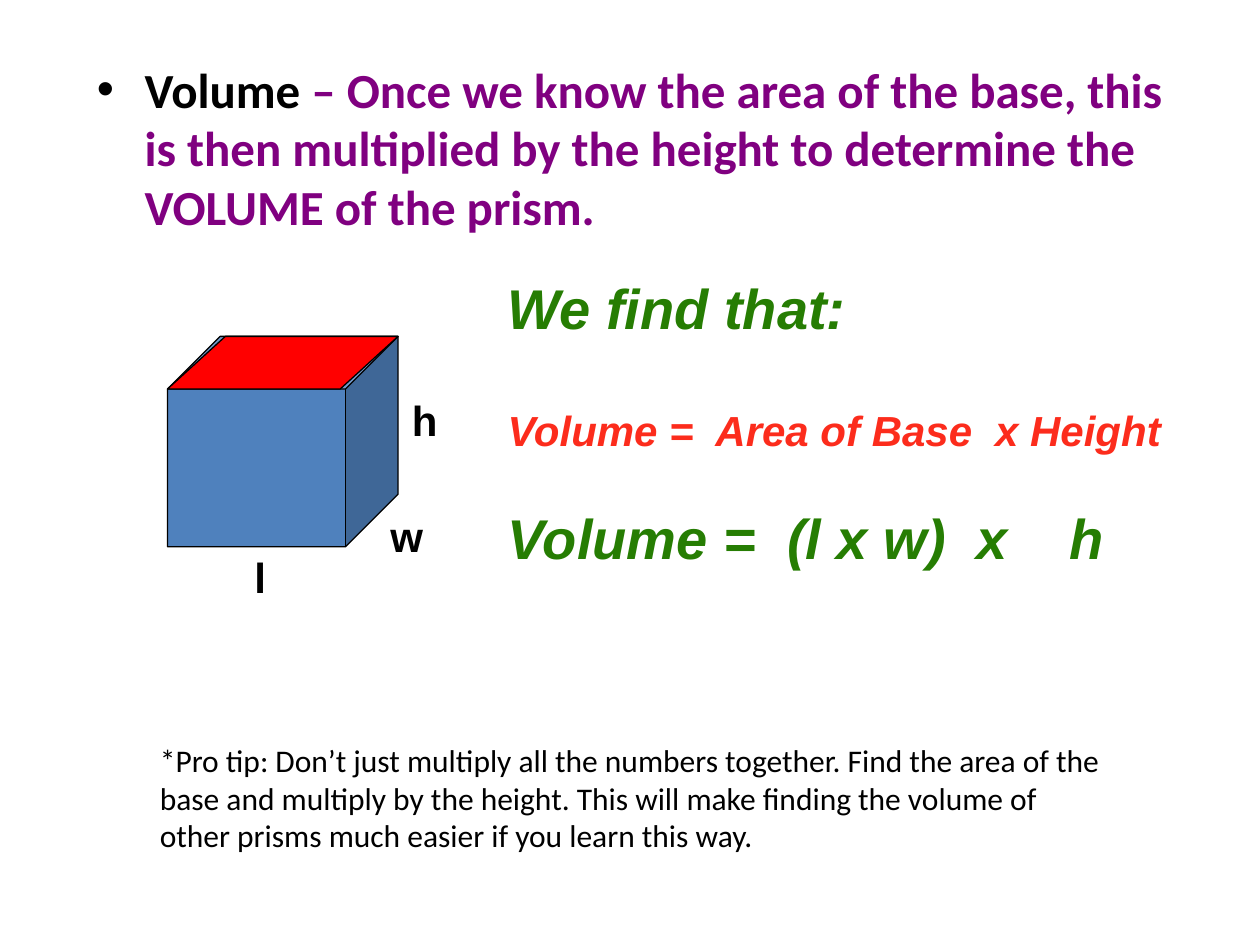
from collections import namedtuple
from dataclasses import dataclass

from lxml.etree import SubElement
from pptx import Presentation
from pptx.dml.color import RGBColor
from pptx.enum.shapes import MSO_SHAPE
from pptx.enum.text import MSO_AUTO_SIZE
from pptx.oxml.ns import qn
from pptx.util import Inches, Pt

Box = namedtuple("Box", "left top width height")


@dataclass(frozen=True)
class Theme:
    black: str = "000000"
    purple: str = "800080"
    green: str = "267D03"
    orange: str = "FC2C1C"
    blue: str = "4F81BD"
    red: str = "FF0000"
    body_font: str = "Calibri"
    label_font: str = "Arial"
    formula_size: int = 32
    body_size: int = 28
    label_size: int = 24
    tip_size: int = 18
    outline: float = 0.75


THEME = Theme()


def style(span, font, size, color, bold=False, italic=False):
    span.font.name = font
    span.font.size = Pt(size)
    span.font.color.rgb = RGBColor.from_string(color)
    span.font.bold = bold
    span.font.italic = italic


def add_text_box(page, box, wrap=True):
    frame = page.shapes.add_textbox(*map(Inches, box)).text_frame
    frame.word_wrap = wrap
    frame.auto_size = MSO_AUTO_SIZE.NONE
    return frame


def add_bullet(para, indent):
    properties = para._p.get_or_add_pPr()
    properties.set("marL", str(Inches(indent)))
    properties.set("indent", str(-Inches(indent)))
    SubElement(properties, qn("a:buFont"), typeface=THEME.label_font)
    SubElement(properties, qn("a:buChar"), char="•")


def add_tab_stops(para, stops):
    tabs = SubElement(para._p.get_or_add_pPr(), qn("a:tabLst"))
    for stop in stops:
        SubElement(tabs, qn("a:tab"), pos=str(Inches(stop)), algn="l")


def add_definition(page, box):
    para = add_text_box(page, box).paragraphs[0]
    add_bullet(para, 0.38)
    parts = [
        ("Volume", THEME.black),
        (" – Once we know the area of the base, this is then multiplied by "
         "the height to determine the VOLUME of the prism.", THEME.purple),
    ]
    for text, color in parts:
        span = para.add_run()
        span.text = text
        style(span, THEME.body_font, THEME.body_size, color, bold=True)


def add_formulas(page, box):
    frame = add_text_box(page, box)
    lines = [
        ("We find that:", THEME.formula_size, THEME.green, 0, []),
        ("Volume =\tArea of Base\tx Height", THEME.label_size, THEME.orange,
         36.8, [1.65, 3.87]),
        ("Volume =\t(l x w)\tx\th", THEME.formula_size, THEME.green,
         27.6, [2.22, 3.72, 4.46]),
    ]
    frame.text = "\n".join(line[0] for line in lines)
    for para, (_, size, color, gap, stops) in zip(frame.paragraphs, lines):
        para.space_before = Pt(gap)
        if stops:
            add_tab_stops(para, stops)
        for span in para.runs:
            style(span, THEME.label_font, size, color, bold=True, italic=True)


def add_solid(page, kind, box, color, adjustment):
    solid = page.shapes.add_shape(kind, *map(Inches, box))
    solid.shadow.inherit = False
    solid.adjustments[0] = adjustment
    solid.fill.solid()
    solid.fill.fore_color.rgb = RGBColor.from_string(color)
    solid.line.color.rgb = RGBColor.from_string(THEME.black)
    solid.line.width = Pt(THEME.outline)


def add_prism(page, box):
    labels = [("l", 0.59, 1.66, 0.29), ("w", 1.67, 1.33, 0.46),
              ("h", 1.84, 0.41, 0.4)]
    for text, across, down, width in labels:
        place = Box(box.left + across, box.top + down, width, 0.5)
        frame = add_text_box(page, place, wrap=False)
        frame.text = text
        style(frame.paragraphs[0].runs[0], THEME.label_font,
              THEME.label_size, THEME.black, bold=True)
    add_solid(page, MSO_SHAPE.CUBE, box, THEME.blue, 0.25)
    lid = box._replace(height=box.height / 4)
    add_solid(page, MSO_SHAPE.PARALLELOGRAM, lid, THEME.red, 1.1)


def add_tip(page, box):
    frame = add_text_box(page, box)
    frame.text = (
        "*Pro tip: Don’t just multiply all the numbers together. Find the "
        "area of the base and multiply by the height. This will make finding "
        "the volume of other prisms much easier if you learn this way."
    )
    style(frame.paragraphs[0].runs[0], THEME.body_font, THEME.tip_size,
          THEME.black)


def main():
    deck = Presentation()
    deck.slide_width, deck.slide_height = Inches(10), Inches(7.5)
    page = deck.slides.add_slide(deck.slide_layouts[6])
    add_definition(page, Box(0.67, 0.42, 8.83, 3.25))
    add_formulas(page, Box(3.93, 2.12, 5.6, 2.5))
    add_prism(page, Box(1.33, 2.67, 1.83, 1.67))
    add_tip(page, Box(1.17, 5.83, 7.75, 1.01))
    deck.save("out.pptx")


if __name__ == "__main__":
    main()
